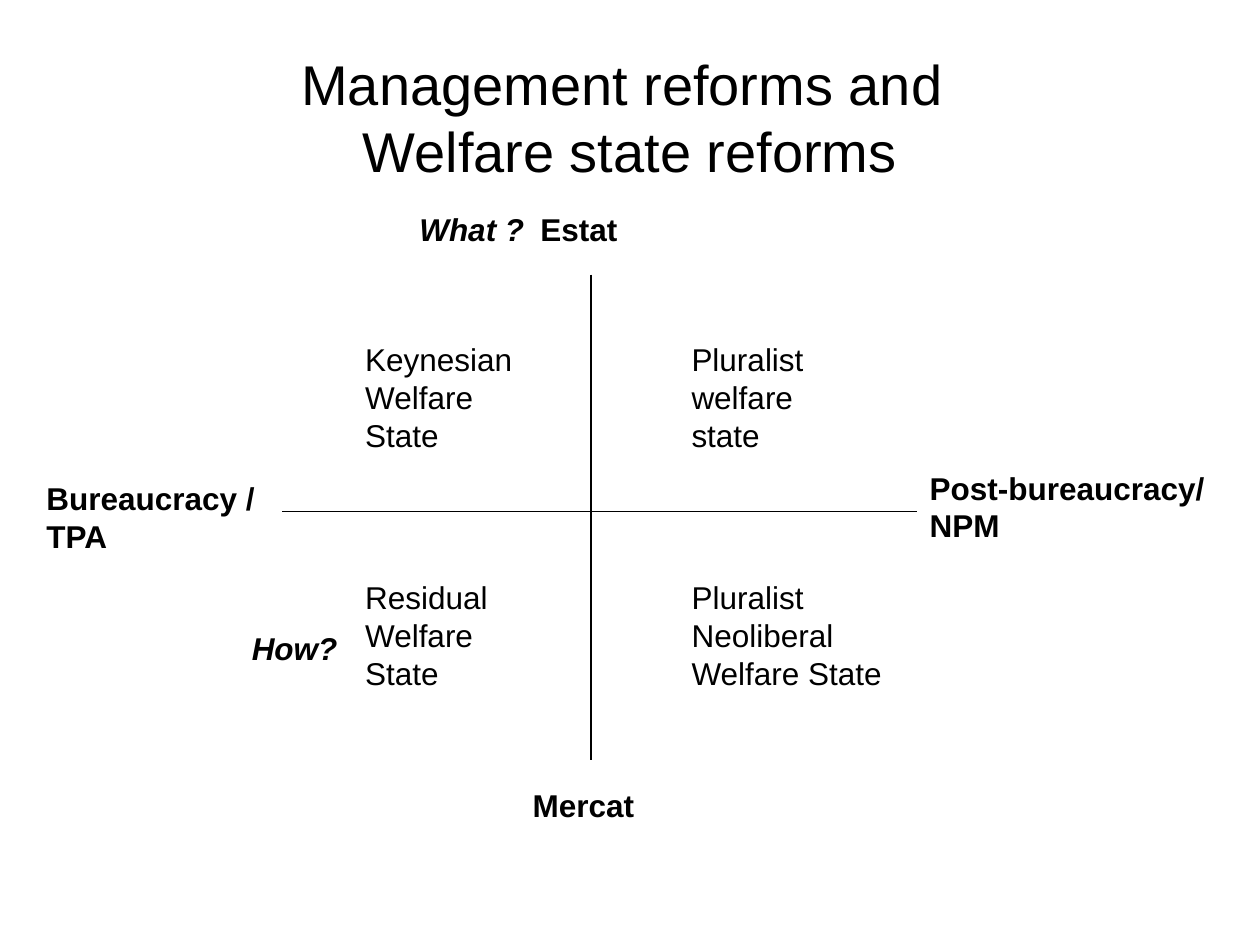
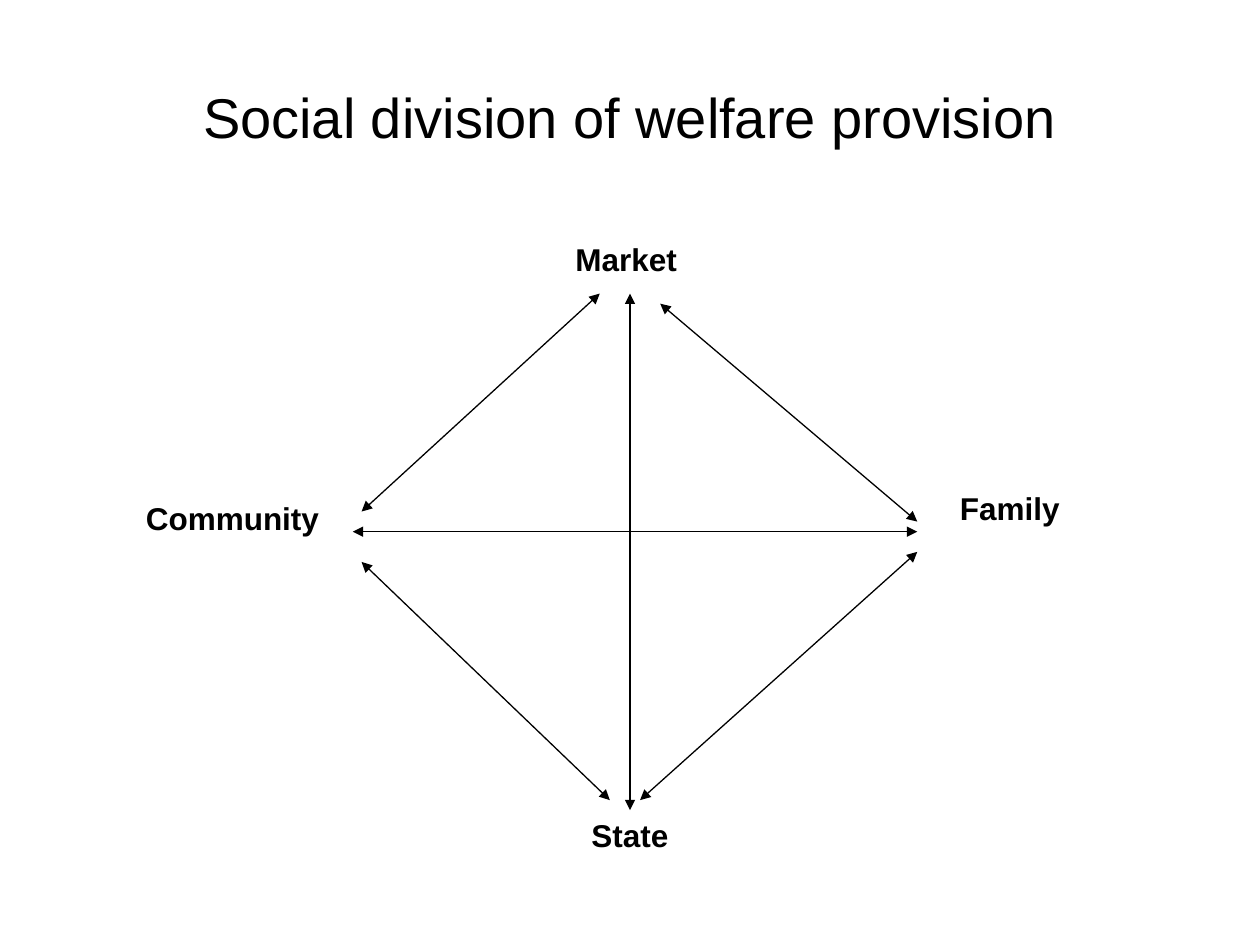
from collections import namedtuple

from lxml import etree
from pptx import Presentation
from pptx.dml.color import RGBColor
from pptx.enum.shapes import MSO_CONNECTOR
from pptx.enum.text import MSO_ANCHOR, PP_ALIGN
from pptx.oxml.ns import qn
from pptx.util import Inches, Pt

STRAIGHT = MSO_CONNECTOR.STRAIGHT
MIDDLE = MSO_ANCHOR.MIDDLE
LEFT, CENTER = PP_ALIGN.LEFT, PP_ALIGN.CENTER

Box = namedtuple("Box", "left top width height")

FONT = "Arial"
INK = "000000"
TITLE_SIZE, LABEL_SIZE = 32, 18
LINE_WIDTH = 0.75
ONE_LINE, TWO_LINES, THREE_LINES = 0.4, 0.71, 1.01
TITLE_BOX = Box(0.5, 0.3, 9, 1.25)
MATRIX_BOX = Box(2.24, 2.18, 5.04, 3.85)
DIAMOND_BOX = Box(2.8, 2.33, 4.48, 4.1)
TITLE_ONLY = 5


def rgb(hex_string):
    return RGBColor.from_string(hex_string)


def style_text(frame, size, align=LEFT, bold=False, italic=False):
    for para in frame.paragraphs:
        para.alignment = align
        for span in para.runs:
            font = span.font
            font.name, font.size = FONT, Pt(size)
            font.bold, font.italic = bold, italic
            font.color.rgb = rgb(INK)


def add_titled_page(deck, title):
    page = deck.slides.add_slide(deck.slide_layouts[TITLE_ONLY])
    heading = page.shapes.title
    heading.left, heading.top, heading.width, heading.height = map(Inches, TITLE_BOX)
    frame = heading.text_frame
    frame.text = title
    frame.vertical_anchor = MIDDLE
    style_text(frame, TITLE_SIZE, CENTER)
    return page


def add_label(page, area, text, left, top, width, height=ONE_LINE, **style):
    """Place a text box at an offset from the corner of the area."""
    label = page.shapes.add_textbox(Inches(area.left + left), Inches(area.top + top),
                                    Inches(width), Inches(height))
    frame = label.text_frame
    frame.word_wrap = True
    frame.text = text
    style_text(frame, LABEL_SIZE, **style)
    return label


def add_line(page, area, start, end, arrows=False):
    """Draw a line between two offsets from the corner of the area."""
    ends = [Inches(corner + offset) for point in (start, end)
            for corner, offset in zip((area.left, area.top), point)]
    line = page.shapes.add_connector(STRAIGHT, *ends)
    line.line.color.rgb = rgb(INK)
    line.line.width = Pt(LINE_WIDTH)
    properties = line.line._get_or_add_ln()
    if arrows:
        for tag in ("a:headEnd", "a:tailEnd"):
            etree.SubElement(properties, qn(tag), type="triangle")
    etree.SubElement(properties.getparent(), qn("a:effectLst"))
    return line


def add_reform_matrix(page, area):
    axis_x, axis_y = 2.45, 1.88
    add_line(page, area, (axis_x, 0), (axis_x, area.height))
    add_line(page, area, (0, axis_y), (area.width, axis_y))

    for text, left, top, width, height in (
            ("Estat", 1.95, -0.56, 1.2, ONE_LINE),
            ("Mercat", 1.89, 4.01, 1.26, ONE_LINE),
            ("Bureaucracy / TPA", -1.97, 1.57, 2.36, TWO_LINES),
            ("Post-bureaucracy/ NPM", area.width, 1.49, 2.52, TWO_LINES)):
        add_label(page, area, text, left, top, width, height, bold=True)

    columns, rows = (0.56, 3.15), (0.47, 2.36)
    quadrants = ((("Keynesian Welfare State", 1.42), ("Pluralist welfare state", 1.26)),
                 (("Residual Welfare State", 1.34),
                  ("Pluralist Neoliberal Welfare State", 2.12)))
    for top, row in zip(rows, quadrants):
        for left, (text, width) in zip(columns, row):
            add_label(page, area, text, left, top, width, THREE_LINES)

    for text, left, top in (("How?", -0.34, 2.76), ("What ?", 0.99, -0.56)):
        add_label(page, area, text, left, top, 1.14, bold=True, italic=True)


def add_provision_diamond(page, area):
    center_x, center_y = 2.2, 1.89
    add_label(page, area, "Market", 1.62, -0.47, 1.1, bold=True, align=CENTER)
    state = add_label(page, area, "State", center_x - 0.55, area.height, 1.1,
                      bold=True, align=CENTER)
    add_label(page, area, "Family", 4.72, 1.5, 1.42, bold=True)
    add_label(page, area, "Community", -1.74, 1.58, 1.73, bold=True)

    upright = add_line(page, area, (center_x, 0), (center_x, area.height), arrows=True)
    upright.end_connect(state, 0)
    for start, end in (((0, center_y), (area.width, center_y)),
                       ((1.96, 0), (0.07, 1.73)),
                       ((0.07, 2.13), (2.04, 4.02)),
                       ((area.width, 2.05), (2.28, 4.02)),
                       ((2.44, 0.08), (area.width, 1.81))):
        add_line(page, area, start, end, arrows=True)


def main():
    deck = Presentation()
    deck.slide_width, deck.slide_height = Inches(10), Inches(7.5)
    add_reform_matrix(
        add_titled_page(deck, "Management reforms and \vWelfare state reforms"), MATRIX_BOX)
    add_provision_diamond(
        add_titled_page(deck, "Social division of welfare provision"), DIAMOND_BOX)
    deck.save("out.pptx")


if __name__ == "__main__":
    main()
